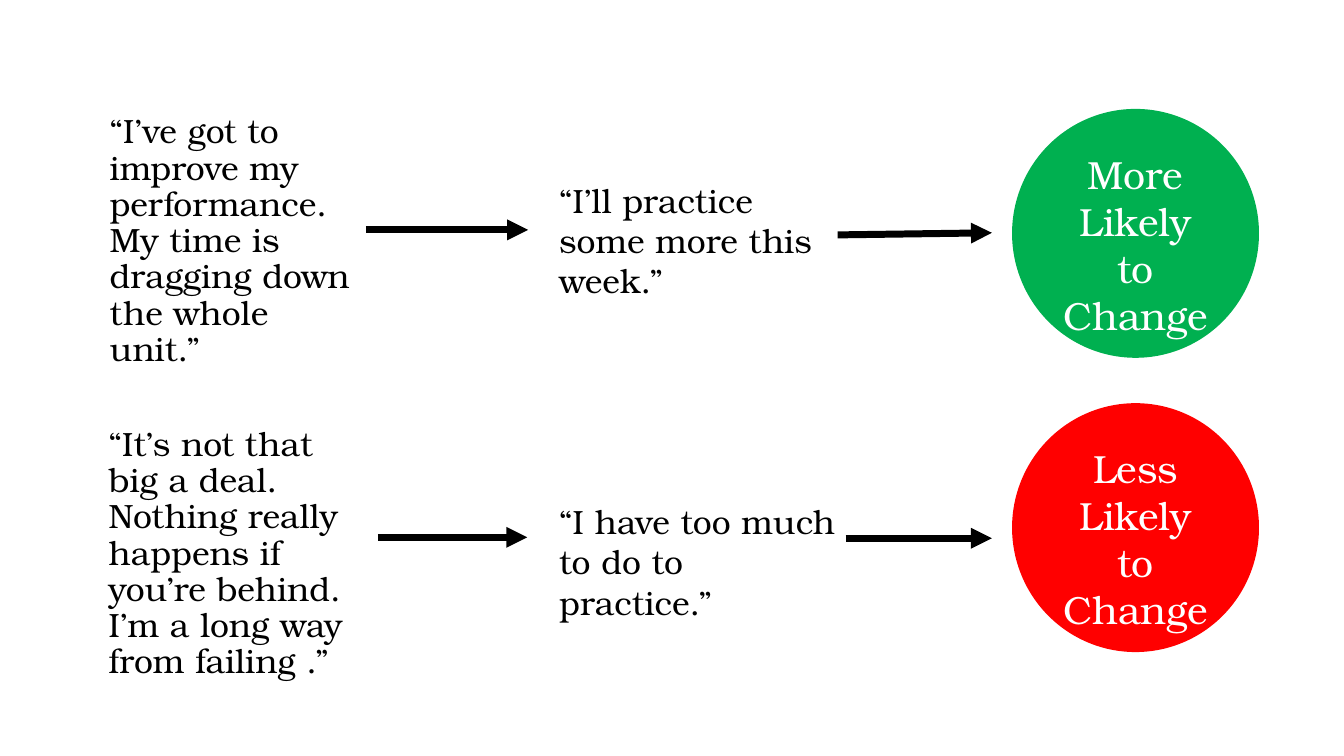
from pptx import Presentation
from pptx.dml.color import RGBColor
from pptx.enum.shapes import MSO_CONNECTOR as CONN, MSO_SHAPE as SHAPE
from pptx.enum.text import MSO_ANCHOR as ANCHOR, PP_ALIGN as ALIGN
from pptx.oxml.ns import qn
from pptx.util import Pt
from lxml import etree

FONT = "TeX Gyre Bonum"
QUOTE = {"name": FONT, "size": Pt(24)}
OUTCOME = {"name": FONT, "size": Pt(28)}
ROWS = [
    {
        "thought": ("“I’ve got to improve my performance. My time is dragging down the whole unit.”",
                    (71.3, 78.5, 188, 191.5)),
        "plan": ("“I’ll practice some more this week.”", (392.4, 124.6, 216, 70)),
        "outcome": ("More Likely to Change", "00B050", (722.9, 77.8, 176.4, 177.8)),
        "arrows": [(261.4, 164.2, 377.3, 164.2), (598.3, 167.8, 708.5, 166.3)],
    },
    {
        "thought": ("“It’s not that big a deal. Nothing really happens if you’re behind. "
                    "I’m a long way from failing .”", (70.6, 301.7, 197.3, 191.5)),
        "plan": ("“I have too much to do to practice.”", (392.4, 354.2, 216, 70)),
        "outcome": ("Less Likely to Change", "FF0000", (722.9, 288, 176.4, 177.8)),
        "arrows": [(270, 383.8, 376.6, 383.8), (604.1, 384.5, 708.5, 384.5)],
    },
]


def pts(values):
    return [Pt(v) for v in values]


def rgb(color):
    return RGBColor.from_string(color)


def write(sp, text, font, color, align=ALIGN.LEFT, spacing=1.0):
    tf = sp.text_frame
    tf.word_wrap = True
    tf.vertical_anchor = ANCHOR.TOP
    p = tf.paragraphs[0]
    p.alignment = align
    p.line_spacing = spacing
    r = p.add_run()
    r.text = text
    for key, value in font.items():
        setattr(r.font, key, value)
    r.font.color.rgb = rgb(color)


def add_quote(s, text, box, spacing):
    write(s.shapes.add_textbox(*pts(box)), text, QUOTE, "000000", spacing=spacing)


def add_outcome(s, text, color, box):
    sp = s.shapes.add_shape(SHAPE.OVAL, *pts(box))
    sp.shadow.inherit = False
    sp.fill.solid()
    sp.fill.fore_color.rgb = rgb(color)
    sp.line.fill.background()
    write(sp, text, OUTCOME, "FFFFFF", ALIGN.CENTER)


def add_arrow(s, ends):
    arrow = s.shapes.add_connector(CONN.STRAIGHT, *pts(ends))
    arrow.line.color.rgb = rgb("000000")
    arrow.line.width = Pt(5)
    sp_pr = arrow._element.spPr
    etree.SubElement(sp_pr.find(qn("a:ln")), qn("a:tailEnd"), type="triangle")
    etree.SubElement(sp_pr, qn("a:effectLst"))


def main():
    prs = Presentation()
    prs.slide_width, prs.slide_height = pts((960, 540))
    s = prs.slides.add_slide(prs.slide_layouts[6])
    for row in ROWS:
        add_quote(s, *row["thought"], spacing=0.9)
        add_quote(s, *row["plan"], spacing=1.0)
        for ends in row["arrows"]:
            add_arrow(s, ends)
        add_outcome(s, *row["outcome"])
    prs.save("out.pptx")


if __name__ == "__main__":
    main()
